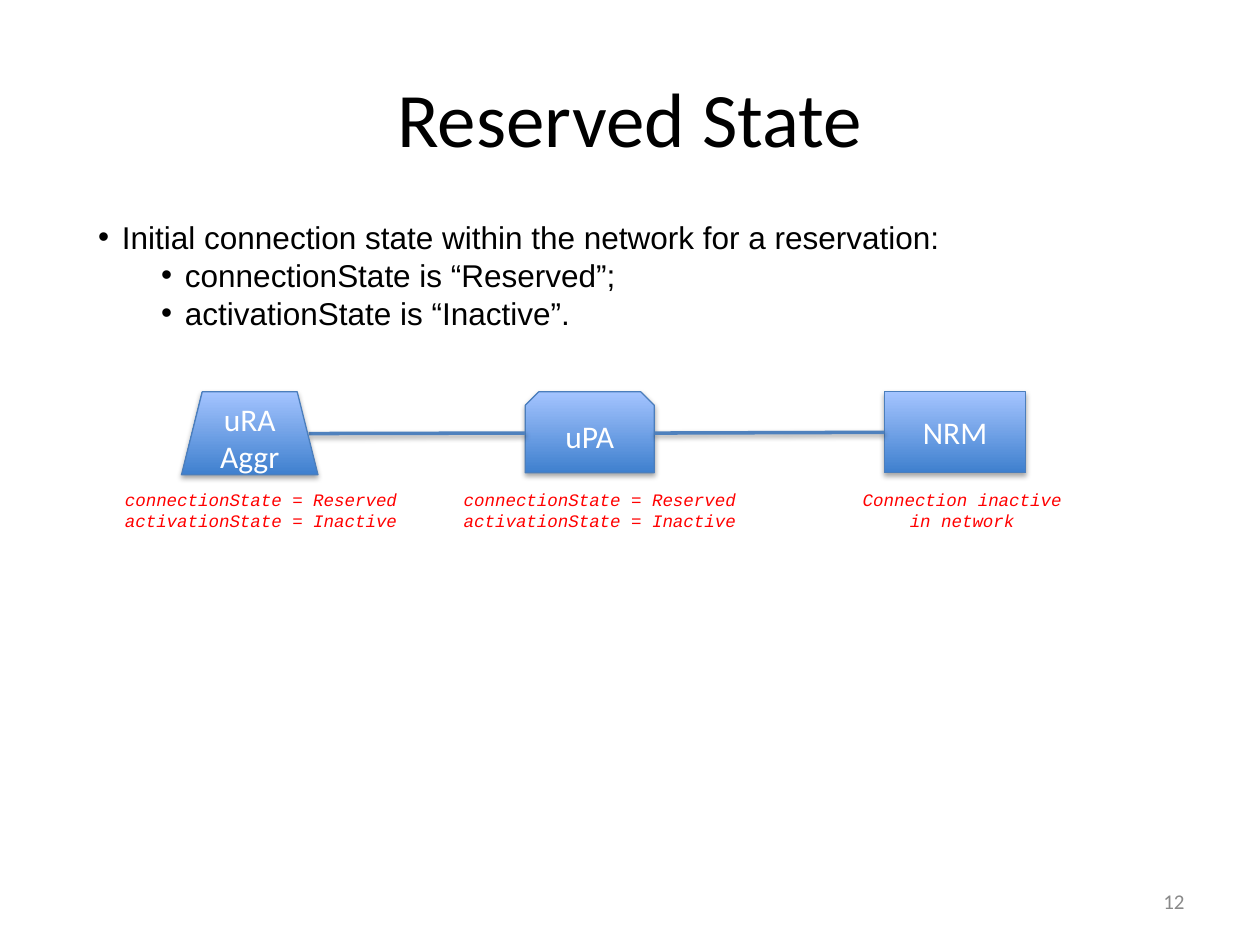
from lxml import etree
from pptx import Presentation
from pptx import util as u
from pptx.dml.color import RGBColor
from pptx.enum import shapes, text
from pptx.oxml import ns

CENTER, LEFT, RIGHT = text.PP_ALIGN.CENTER, text.PP_ALIGN.LEFT, text.PP_ALIGN.RIGHT
MIDDLE, TOP = text.MSO_ANCHOR.MIDDLE, text.MSO_ANCHOR.TOP


def color(value):
    return RGBColor.from_string(value)


def add_child(parent, tag, **attributes):
    """Append a DrawingML element with the given attributes."""
    values = {name: str(value) for name, value in attributes.items()}
    return etree.SubElement(parent, ns.qn(tag), values)


class StateSlide:
    HEADING, BODY, CODE = "Calibri", "Arial", "Courier New"
    BLACK, WHITE, RED, GRAY = "000000", "FFFFFF", "FF0000", "898989"
    BOTTOM_BLUE, TOP_BLUE = "3F80CE", "A4C4FF"
    OUTLINE, LINK = "4B7EBC", "4F81BD"

    def __init__(self, presentation):
        self.slide = presentation.slides.add_slide(presentation.slide_layouts[6])

    def set_text(self, frame, lines, font, size, ink, align=CENTER, anchor=TOP,
                 italic=None, levels=None):
        """Fill a text frame; levels gives each line a bullet and an indent."""
        frame.word_wrap = True
        frame.vertical_anchor = anchor
        for index, line in enumerate(lines):
            paragraph = frame.paragraphs[0] if index == 0 else frame.add_paragraph()
            paragraph.text = line
            paragraph.alignment = align
            if levels:
                self.bullet(paragraph, levels[index])
            paragraph.font.name = font
            paragraph.font.size = u.Pt(size)
            paragraph.font.italic = italic
            paragraph.font.color.rgb = color(ink)

    def bullet(self, paragraph, level):
        paragraph.level = level
        properties = paragraph._p.get_or_add_pPr()
        hanging = u.Cm(0.48)
        properties.set("marL", str(hanging + level * u.Cm(1.27)))
        properties.set("indent", str(-hanging))
        add_child(properties, "a:buFont", typeface=self.BODY)
        add_child(properties, "a:buChar", char="•")

    def text_box(self, left, top, width, height, lines, *style, **options):
        box = self.slide.shapes.add_textbox(
            u.Cm(left), u.Cm(top), u.Cm(width), u.Cm(height))
        self.set_text(box.text_frame, lines, *style, **options)

    def shadow(self, shape, distance, opacity):
        """Cast a soft black shadow straight down."""
        properties = shape._element.spPr
        effects = properties.find(ns.qn("a:effectLst"))
        if effects is None:
            effects = add_child(properties, "a:effectLst")
        outer = add_child(effects, "a:outerShdw", blurRad=u.Pt(3.1),
                          dist=u.Pt(distance), dir=90 * 60000, rotWithShape=0)
        tint = add_child(outer, "a:srgbClr", val=self.BLACK)
        add_child(tint, "a:alpha", val=opacity * 1000)

    def node(self, kind, left, width, height, lines):
        shape = self.slide.shapes.add_shape(
            kind, u.Cm(left), u.Cm(7.9), u.Cm(width), u.Cm(height))
        shape.shadow.inherit = False
        shape.fill.gradient()
        shape.fill.gradient_angle = 90
        for stop, blue in zip(shape.fill.gradient_stops,
                              (self.BOTTOM_BLUE, self.TOP_BLUE)):
            stop.color.rgb = color(blue)
        shape.line.color.rgb = color(self.OUTLINE)
        shape.line.width = u.Pt(0.75)
        self.shadow(shape, 1.8, 35)
        self.set_text(shape.text_frame, lines, self.HEADING, 18, self.WHITE,
                      anchor=MIDDLE)
        return shape

    def link(self, start, end, start_shape=None):
        """Draw a line leftwards, joined to the left side of start_shape."""
        connector = self.slide.shapes.add_connector(
            shapes.MSO_CONNECTOR.STRAIGHT, *map(u.Cm, start + end))
        if start_shape is not None:
            connector.begin_connect(start_shape, 1)
        connector.line.color.rgb = color(self.LINK)
        connector.line.width = u.Pt(2)
        self.shadow(connector, 1.6, 38)

    def caption(self, left, width, lines):
        self.text_box(left, 9.73, width, 1.12, lines, self.CODE, 10, self.RED,
                      italic=True)


def main():
    presentation = Presentation()
    presentation.slide_width, presentation.slide_height = u.Cm(25.4), u.Cm(19.05)
    page = StateSlide(presentation)

    page.text_box(1.27, 0.76, 22.86, 3.18, ["Reserved State"],
                  page.HEADING, 44, page.BLACK, anchor=MIDDLE)

    kinds = shapes.MSO_SHAPE
    manager = page.node(kinds.RECTANGLE, 17.83, 2.85, 1.63, ["NRM"])
    page.node(kinds.SNIP_2_SAME_RECTANGLE, 10.59, 2.6, 1.63, ["uPA"])
    page.link((17.83, 8.71), (13.19, 8.73), manager)
    page.link((10.59, 8.73), (6.22, 8.74))
    page.node(kinds.TRAPEZOID, 3.66, 2.75, 1.67, ["uRA", "Aggr"])

    page.caption(16.97, 4.85, ["Connection inactive in network"])
    for left in (8.66, 1.83):
        page.caption(left, 6.86, ["connectionState = Reserved",
                                  "activationState = Inactive"])

    page.text_box(1.73, 4.27, 20.29, 2.57, [
        "Initial connection state within the network for a reservation:",
        "connectionState is “Reserved”;",
        "activationState is “Inactive”.",
    ], page.BODY, 18, page.BLACK, align=LEFT, levels=(0, 1, 1))
    page.text_box(18.21, 17.65, 5.92, 1.02, ["12"],
                  page.HEADING, 12, page.GRAY, align=RIGHT, anchor=MIDDLE)

    presentation.save("out.pptx")


if __name__ == "__main__":
    main()
